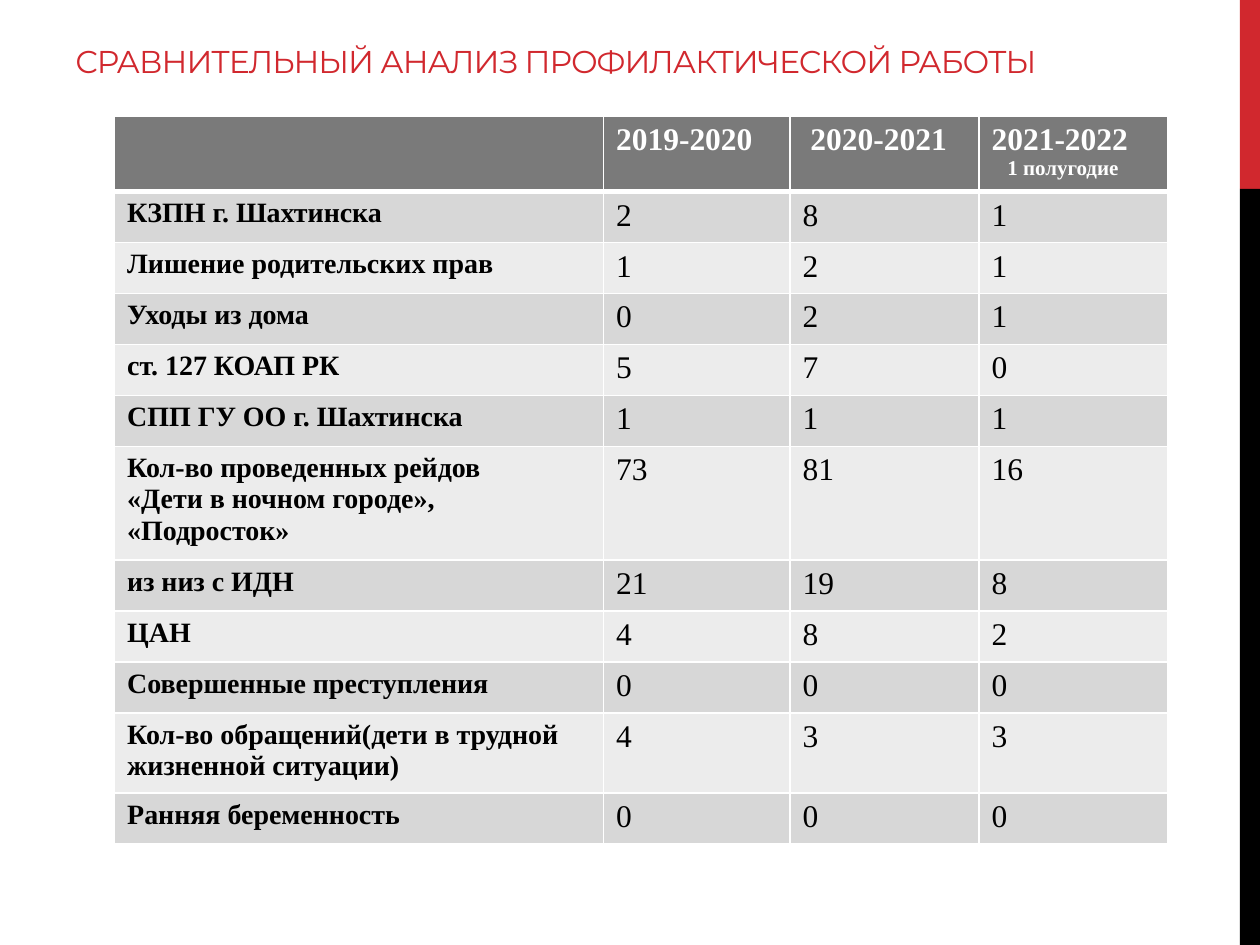
from lxml.etree import SubElement as Sub
from pptx import Presentation
from pptx.dml.color import RGBColor as Rgb
from pptx.enum.shapes import MSO_SHAPE as Shape
from pptx.enum.text import MSO_ANCHOR as Anchor
from pptx.oxml.ns import qn
from pptx.util import Inches, Pt

WIDE, HIGH = Inches(10), Inches(7.5)
RED, BLACK, WHITE = "D1282E", "000000", "FFFFFF"
HEAD, BANDS = "7A7A7A", ("D7D7D7", "ECECEC")
SERIF = "Times New Roman"
COLS = (38.8, 14.8, 15, 15)
ROW = 5.4
YEARS = ("", "2019-2020", "2020-2021", "2021-2022\n1 полугодие")
DATA = (
    ("КЗПН г. Шахтинска", 2, 8, 1),
    ("Лишение родительских прав", 1, 2, 1),
    ("Уходы из дома", 0, 2, 1),
    ("ст. 127 КОАП РК", 5, 7, 0),
    ("СПП ГУ ОО г. Шахтинска", 1, 1, 1),
    ("Кол-во проведенных рейдов\n«Дети в ночном городе», «Подросток»", 73, 81, 16),
    ("из низ с ИДН", 21, 19, 8),
    ("ЦАН", 4, 8, 2),
    ("Совершенные преступления", 0, 0, 0),
    ("Кол-во обращений(дети в трудной жизненной ситуации)", 4, 3, 3),
    ("Ранняя беременность", 0, 0, 0),
)


def across(share):
    """Turn a percentage of the slide's width into a length."""
    return int(WIDE * share / 100)


def down(share):
    """Turn a percentage of the slide's height into a length."""
    return int(HIGH * share / 100)


def box(x, y, w, h):
    return across(x), down(y), across(w), down(h)


def paint(fill, tone):
    fill.solid()
    fill.fore_color.rgb = Rgb.from_string(tone)


def style(para, size, tone, face, bold=False):
    font = para.font
    font.size, font.name, font.bold = Pt(size), face, bold
    font.color.rgb = Rgb.from_string(tone)


def indent(para, points):
    para._p.get_or_add_pPr().set("marL", str(Pt(points)))


def add_bar(slide, place, tone):
    bar = slide.shapes.add_shape(Shape.RECTANGLE, *place)
    bar.shadow.inherit = False
    paint(bar.fill, tone)
    bar.line.fill.background()


def add_title(slide, place, text):
    frame = slide.shapes.add_textbox(*place).text_frame
    frame.word_wrap = True
    frame.vertical_anchor = Anchor.BOTTOM
    para = frame.paragraphs[0]
    run = para.add_run()
    run.text = text
    style(para, 18, RED, "Montserrat")
    run._r.get_or_add_rPr().set("spc", "-60")


def edge(cell, top, bottom):
    """Draw white cell borders; top and bottom widths are in points."""
    props = cell._tc.get_or_add_tcPr()
    for side, width in zip("LRTB", (1, 1, top, bottom)):
        line = Sub(props, qn(f"a:ln{side}"), w=str(Pt(width)))
        Sub(Sub(line, qn("a:solidFill")), qn("a:srgbClr"), val=WHITE)


def fill_cell(cell, row, col, text):
    edge(cell, 3 if row == 1 else 1, 3 if row == 0 else 1)
    paint(cell.fill, BANDS[(row - 1) % 2] if row else HEAD)
    cell.text = str(text)
    size = 16 if row and col == 0 else 18
    for para in cell.text_frame.paragraphs:
        style(para, size, BLACK if row else WHITE, SERIF, row == 0 or col == 0)


def add_grid(slide, x, y):
    rows = (YEARS, *DATA)
    place = box(x, y, sum(COLS), ROW * len(rows))
    grid = slide.shapes.add_table(len(rows), len(COLS), *place).table
    for col, share in zip(grid.columns, COLS):
        col.width = across(share)
    for r, values in enumerate(rows):
        for c, value in enumerate(values):
            fill_cell(grid.cell(r, c), r, c, value)
    indent(grid.cell(0, 2).text_frame.paragraphs[0], 4.5)
    note = grid.cell(0, 3).text_frame.paragraphs[1]
    note.font.size = Pt(12)
    indent(note, 9)


def main():
    deck = Presentation()
    deck.slide_width, deck.slide_height = WIDE, HIGH
    slide = deck.slides.add_slide(deck.slide_layouts[6])
    add_bar(slide, box(98.4, 0, 1.6, 20), RED)
    add_bar(slide, box(98.4, 20, 1.6, 80), BLACK)
    add_title(slide, box(5, 2.27, 88.3, 6.8),
              "СРАВНИТЕЛЬНЫЙ АНАЛИЗ ПРОФИЛАКТИЧЕСКОЙ РАБОТЫ")
    add_grid(slide, 9.1, 12.27)
    deck.save("out.pptx")


if __name__ == "__main__":
    main()
